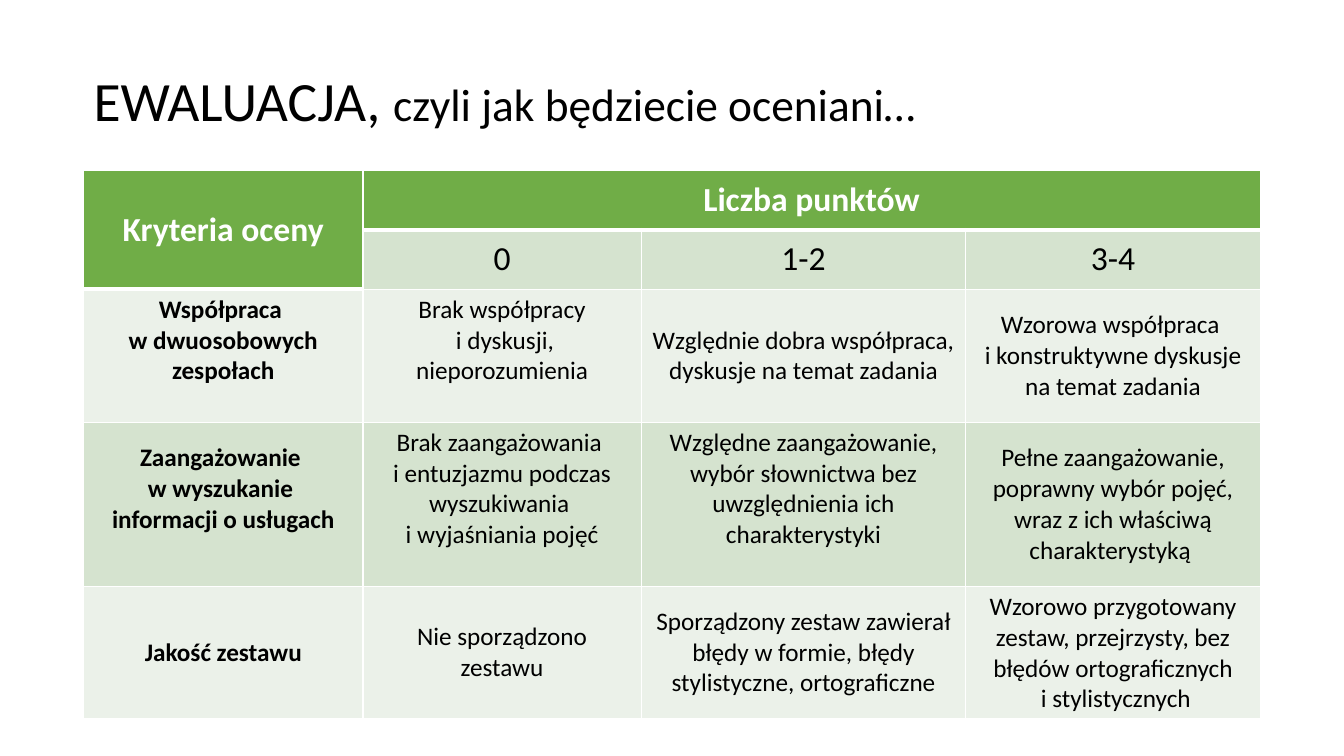
from dataclasses import dataclass

from lxml import etree
from pptx import Presentation, util as u
from pptx.dml.color import RGBColor
from pptx.enum import text
from pptx.oxml.ns import qn


@dataclass(frozen=True)
class Theme:
    font: str = "Calibri"
    ink: str = "000000"
    white: str = "FFFFFF"
    header: str = "70AD47"
    band_dark: str = "D5E3CF"
    band_light: str = "EBF1E9"
    title_size: float = 39.6
    subtitle_size: float = 32.4
    header_size: float = 24
    body_size: float = 18
    grid_line: float = 1
    header_line: float = 3
    cell_margin: float = 0.05
    raised_margin: float = 0.36


THEME = Theme()
COLUMN_WIDTHS = (2.77, 2.76, 3.22, 2.92)
ROW_HEIGHTS = (0.59, 0.59, 1.32, 1.63, 1.31)
POINTS = ("0", "1-2", "3-4")
CRITERIA = (
    ("Współpraca \nw dwuosobowych zespołach",
     "Brak współpracy\n i dyskusji, nieporozumienia",
     "Względnie dobra współpraca, dyskusje na temat zadania",
     "Wzorowa współpraca \ni konstruktywne dyskusje na temat zadania"),
    ("Zaangażowanie \nw wyszukanie \ninformacji o usługach",
     "Brak zaangażowania \ni entuzjazmu podczas wyszukiwania \ni wyjaśniania pojęć",
     "Względne zaangażowanie, wybór słownictwa bez uwzględnienia ich charakterystyki",
     "Pełne zaangażowanie, poprawny wybór pojęć, wraz z ich właściwą charakterystyką "),
    ("Jakość zestawu",
     "Nie sporządzono\nzestawu",
     "Sporządzony zestaw zawierał błędy w formie, błędy stylistyczne, ortograficzne",
     "Wzorowo przygotowany zestaw, przejrzysty, bez błędów ortograficznych\n i stylistycznych"),
)
# Cells (criterion, column) whose text sits above the middle
RAISED_CELLS = {(0, 0), (0, 1), (1, 0), (1, 1), (1, 2)}


class SlideBuilder:
    def __init__(self, slide, theme):
        self.slide = slide
        self.theme = theme

    def add_run(self, paragraph, words, size, color, bold=False):
        for index, line in enumerate(words.split("\n")):
            if index:
                paragraph.add_line_break()
            run = paragraph.add_run()
            run.text = line
            run.font.name = self.theme.font
            run.font.size = u.Pt(size)
            run.font.bold = bold
            run.font.color.rgb = RGBColor.from_string(color)

    def add_title(self, left, top, width, height, parts):
        frame = self.slide.shapes.add_textbox(
            u.Inches(left), u.Inches(top), u.Inches(width), u.Inches(height)).text_frame
        frame.word_wrap = True
        frame.vertical_anchor = text.MSO_ANCHOR.MIDDLE
        frame.margin_bottom = u.Inches(0.72)
        paragraph = frame.paragraphs[0]
        paragraph.line_spacing = 0.9
        for words, size in parts:
            self.add_run(paragraph, words, size, self.theme.ink)

    def add_table(self, left, top, widths, heights):
        table = self.slide.shapes.add_table(
            len(heights), len(widths), u.Inches(left), u.Inches(top),
            u.Inches(sum(widths)), u.Inches(sum(heights))).table
        for column, width in zip(table.columns, widths):
            column.width = u.Inches(width)
        for row, height in zip(table.rows, heights):
            row.height = u.Inches(height)
        return table

    def style_cell(self, cell, fill, bottom_line=None):
        properties = cell._tc.get_or_add_tcPr()
        for side in "LRTB":
            points = bottom_line if side == "B" and bottom_line else self.theme.grid_line
            line = etree.SubElement(properties, qn(f"a:ln{side}"), w=str(u.Pt(points)))
            solid = etree.SubElement(line, qn("a:solidFill"))
            etree.SubElement(solid, qn("a:srgbClr"), val=self.theme.white)
        cell.fill.solid()
        cell.fill.fore_color.rgb = RGBColor.from_string(fill)

    def fill_cell(self, cell, words, size, color, bold=False, raised=False):
        cell.vertical_anchor = text.MSO_ANCHOR.MIDDLE
        cell.margin_top = u.Inches(self.theme.cell_margin)
        cell.margin_bottom = u.Inches(
            self.theme.raised_margin if raised else self.theme.cell_margin)
        paragraph = cell.text_frame.paragraphs[0]
        paragraph.alignment = text.PP_ALIGN.CENTER
        self.add_run(paragraph, words, size, color, bold)


def main():
    presentation = Presentation()
    presentation.slide_width = u.Inches(13.33)
    presentation.slide_height = u.Inches(7.5)
    slide = presentation.slides.add_slide(presentation.slide_layouts[6])
    builder = SlideBuilder(slide, THEME)

    # Title
    builder.add_title(0.83, 0.67, 10, 1.38, (
        ("EWALUACJA, ", THEME.title_size),
        ("czyli jak będziecie oceniani…", THEME.subtitle_size)))

    # Grid: header cells, then alternating bands
    table = builder.add_table(0.83, 1.69, COLUMN_WIDTHS, ROW_HEIGHTS)
    for row in range(len(ROW_HEIGHTS)):
        for column in range(len(COLUMN_WIDTHS)):
            if row == 0 or (row == 1 and column == 0):
                builder.style_cell(table.cell(row, column), THEME.header, THEME.header_line)
            else:
                band = THEME.band_dark if row % 2 else THEME.band_light
                builder.style_cell(table.cell(row, column), band)
    table.cell(0, 0).merge(table.cell(1, 0))
    table.cell(0, 1).merge(table.cell(0, 3))

    # Headings and point ranges
    for column, heading in enumerate(("Kryteria oceny", "Liczba punktów")):
        builder.fill_cell(table.cell(0, column), heading,
                          THEME.header_size, THEME.white, bold=True)
    for column, points in enumerate(POINTS, start=1):
        builder.fill_cell(table.cell(1, column), points, THEME.header_size, THEME.ink)

    # Criteria
    for index, criterion in enumerate(CRITERIA):
        for column, words in enumerate(criterion):
            builder.fill_cell(table.cell(index + 2, column), words, THEME.body_size,
                              THEME.ink, bold=column == 0,
                              raised=(index, column) in RAISED_CELLS)

    presentation.save("out.pptx")


if __name__ == "__main__":
    main()
